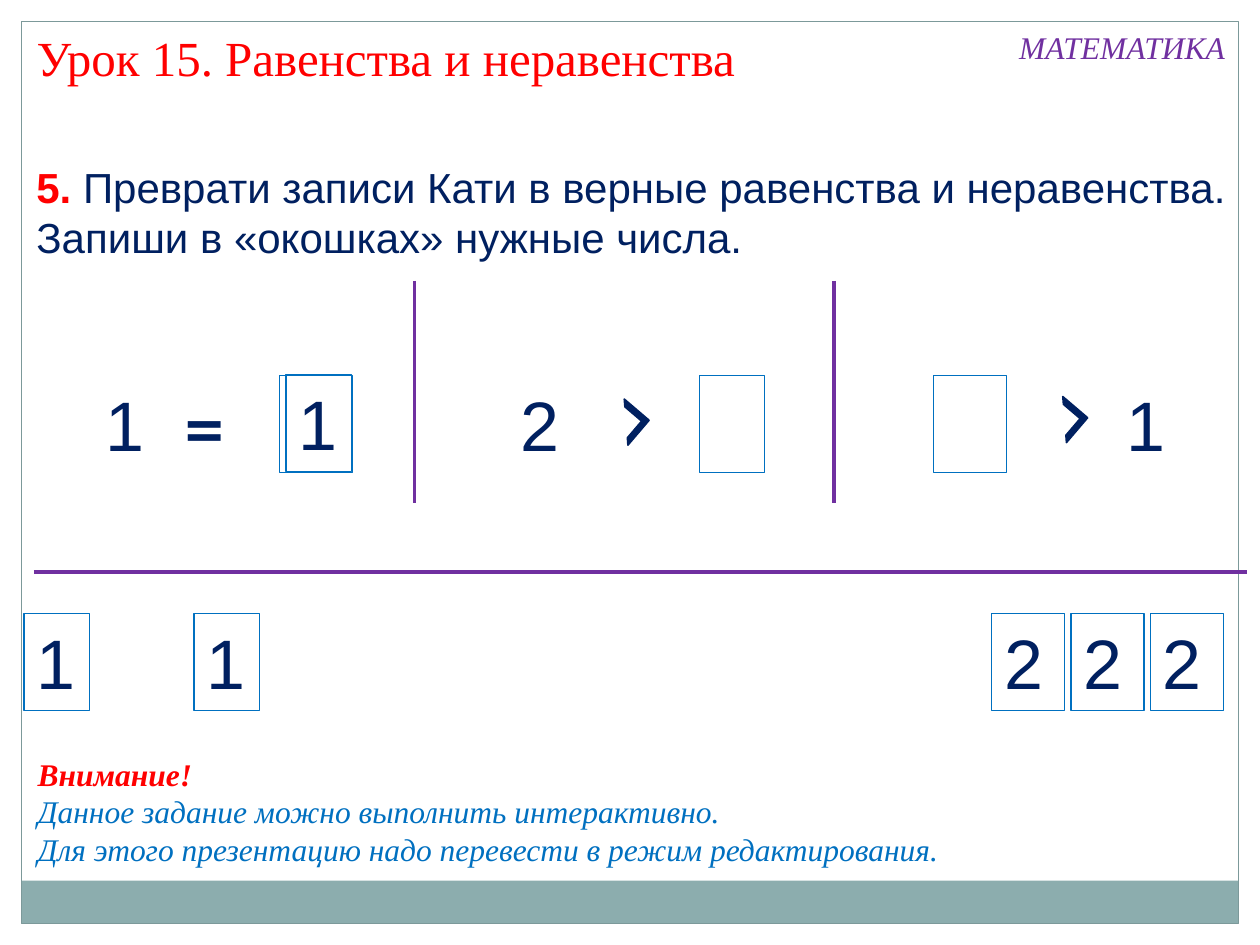
from lxml import etree
from pptx import Presentation
from pptx.dml.color import RGBColor
from pptx.enum import shapes, text
from pptx.oxml import ns
from pptx.util import Inches, Pt

RED = RGBColor(0xFF, 0x00, 0x00)
NAVY = RGBColor(0x00, 0x20, 0x60)
BLUE = RGBColor(0x00, 0x70, 0xC0)
PURPLE = RGBColor(0x70, 0x30, 0xA0)
BAND = RGBColor(0x8C, 0xAD, 0xAE)
BORDER = RGBColor(0x7C, 0x99, 0x9A)

SERIF = "Times New Roman"
SANS = "Arial"
CARD_HEIGHT = 0.77
NARROW, WIDE = 0.52, 0.58


def place(shape, box):
    shape.left, shape.top, shape.width, shape.height = map(Inches, box)


def format_span(span, name, size, color, bold=False, italic=False):
    font = span.font
    font.name, font.size = name, Pt(size)
    font.bold, font.italic = bold, italic
    font.color.rgb = color


def write(shape, words, name, size, color, **style):
    """Put one left-aligned line of text at the top of a shape."""
    frame = shape.text_frame
    frame.word_wrap = True
    frame.vertical_anchor = text.MSO_ANCHOR.TOP
    frame.text = words
    for para in frame.paragraphs:
        para.alignment = text.PP_ALIGN.LEFT
        for span in para.runs:
            format_span(span, name, size, color, **style)
    return frame


def add_label(page, box, words, name, size, color, **style):
    label = page.shapes.add_textbox(*map(Inches, box))
    return write(label, words, name, size, color, **style)


def add_box(page, box, fill=None, line=None, width=0.75,
            kind=shapes.MSO_SHAPE.RECTANGLE):
    shape = page.shapes.add_shape(kind, *map(Inches, box))
    shape.shadow.inherit = False
    if fill is None:
        shape.fill.background()
    else:
        shape.fill.solid()
        shape.fill.fore_color.rgb = fill
    if line is None:
        shape.line.fill.background()
    else:
        shape.line.color.rgb = line
        shape.line.width = Pt(width)
    return shape


def add_rule(page, *ends):
    rule = page.shapes.add_connector(shapes.MSO_CONNECTOR.STRAIGHT, *map(Inches, ends))
    rule.line.color.rgb = PURPLE
    rule.line.width = Pt(2.25)
    etree.SubElement(rule._element.spPr, ns.qn("a:effectLst"))


def add_window(page, left, top, width):
    return add_box(page, (left, top, width, CARD_HEIGHT), line=BLUE)


def add_card(page, left, top, width, digit):
    write(add_window(page, left, top, width), digit, SANS, 40, NAVY)


def add_digit(page, left, top, width, digit):
    add_label(page, (left, top, width, CARD_HEIGHT), digit, SANS, 40, NAVY)


def add_greater_sign(page, left, top):
    sign = add_box(page, (left, top, 0.26, 0.26), NAVY, NAVY, 0.9,
                   shapes.MSO_SHAPE.HALF_FRAME)
    sign.adjustments[0], sign.adjustments[1] = 0.17, 0.16
    sign.rotation = 40.4
    sign._element.spPr.find(ns.qn("a:xfrm")).set("flipH", "1")


def add_frame(page, left, top, width, height):
    band = 0.34
    add_box(page, (left, top + height - band, width, band), fill=BAND)
    add_box(page, (left, top, width, height), line=BORDER)


def add_heading(page, left, top):
    title = page.shapes.title
    place(title, (left, top, 7.8, 0.57))
    write(title, "Урок 15. Равенства и неравенства", SERIF, 28, RED)
    subject = add_label(page, (left + 7.8, top, 1.85, 0.4), "МАТЕМАТИКА",
                        SERIF, 18, PURPLE, italic=True)
    subject.word_wrap = False


def add_task(page, left, top):
    frame = add_label(page, (left, top, 9.71, 0.91), "5. ", SANS, 24, RED, bold=True)
    span = frame.paragraphs[0].add_run()
    span.text = ("Преврати записи Кати в верные равенства и неравенства. "
                 "Запиши в «окошках» нужные числа.")
    format_span(span, SANS, 24, NAVY)


def add_statements(page, left, top):
    """Three columns: 1 = □, 2 > □ and □ > 1, split by upright rules."""
    row = top + 0.75
    pitch = 3.33
    first, second, third = (left + pitch * column for column in range(3))
    for edge in (second, third):
        add_rule(page, edge, top, edge, top + 1.76)

    add_digit(page, first + 0.78, row, NARROW, "1")
    add_label(page, (first + 1.4, row, 0.46, CARD_HEIGHT), "=",
              "Cambria", 40, NAVY, bold=True)
    add_window(page, first + 2.26, row, WIDE)
    add_card(page, first + 2.31, row - 0.01, NARROW, "1")

    add_digit(page, second + 0.74, row, WIDE, "2")
    add_greater_sign(page, second + 1.55, row + 0.24)
    add_window(page, second + 2.26, row, NARROW)

    add_window(page, third + 0.79, row, WIDE)
    add_greater_sign(page, third + 1.7, row + 0.22)
    add_digit(page, third + 2.22, row, WIDE, "1")


def add_card_supply(page, left, top):
    add_rule(page, left + 0.08, top - 0.33, left + 9.71, top - 0.33)
    for column in range(2):
        add_card(page, left + 1.35 * column, top, NARROW, "1")
    for column in range(3):
        add_card(page, left + 7.68 + 0.63 * column, top, WIDE, "2")


def add_note(page, left, top):
    lines = ("Внимание!",
             "Данное задание можно выполнить интерактивно.",
             "Для этого презентацию надо перевести в режим редактирования.")
    frame = add_label(page, (left, top, 8.07, 1.01), "\n".join(lines),
                      SERIF, 18, BLUE, italic=True)
    format_span(frame.paragraphs[0].runs[0], SERIF, 18, RED, bold=True, italic=True)


def main():
    deck = Presentation()
    deck.slide_width, deck.slide_height = Inches(10), Inches(7.5)
    page = deck.slides.add_slide(deck.slide_layouts.get_by_name("Title Only"))
    add_frame(page, 0.17, 0.17, 9.66, 7.16)
    add_heading(page, 0.19, 0.17)
    add_task(page, 0.19, 1.23)
    add_statements(page, -0.04, 2.23)
    add_card_supply(page, 0.19, 4.87)
    add_note(page, 0.2, 5.94)
    deck.save("out.pptx")


if __name__ == "__main__":
    main()
